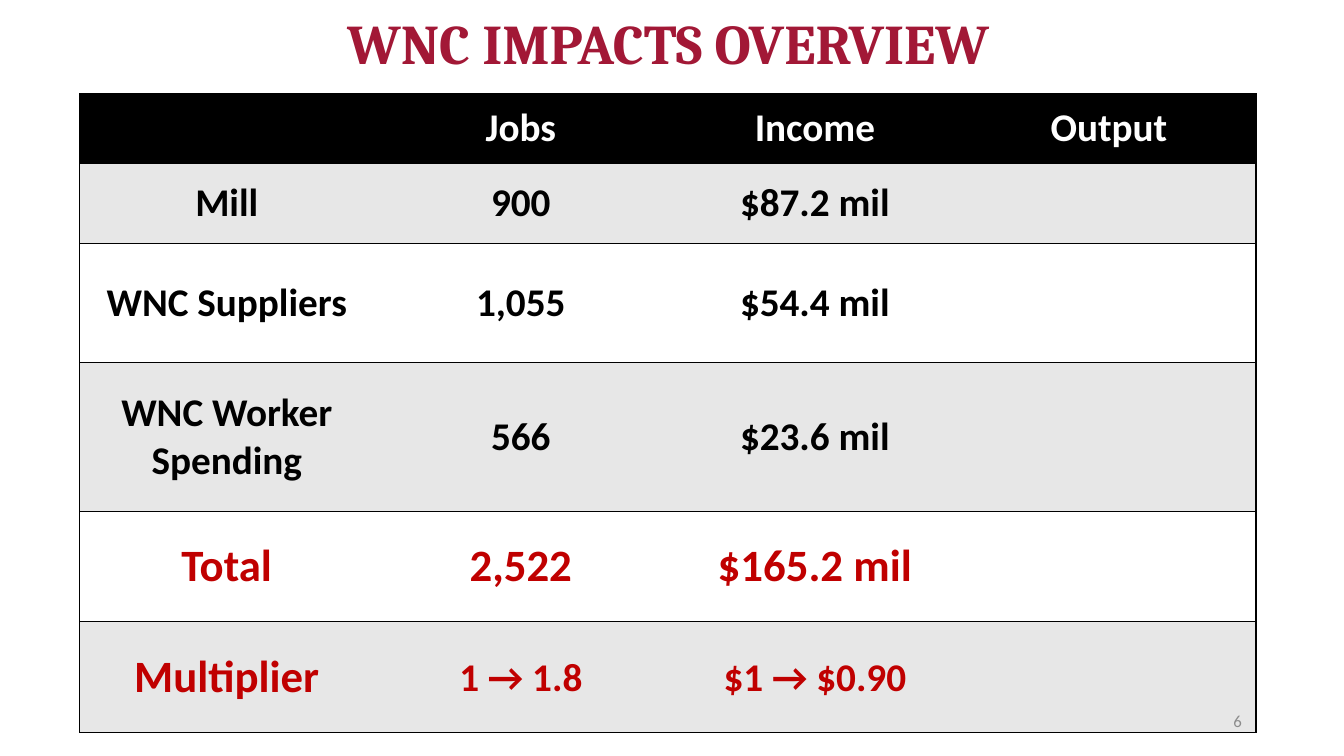
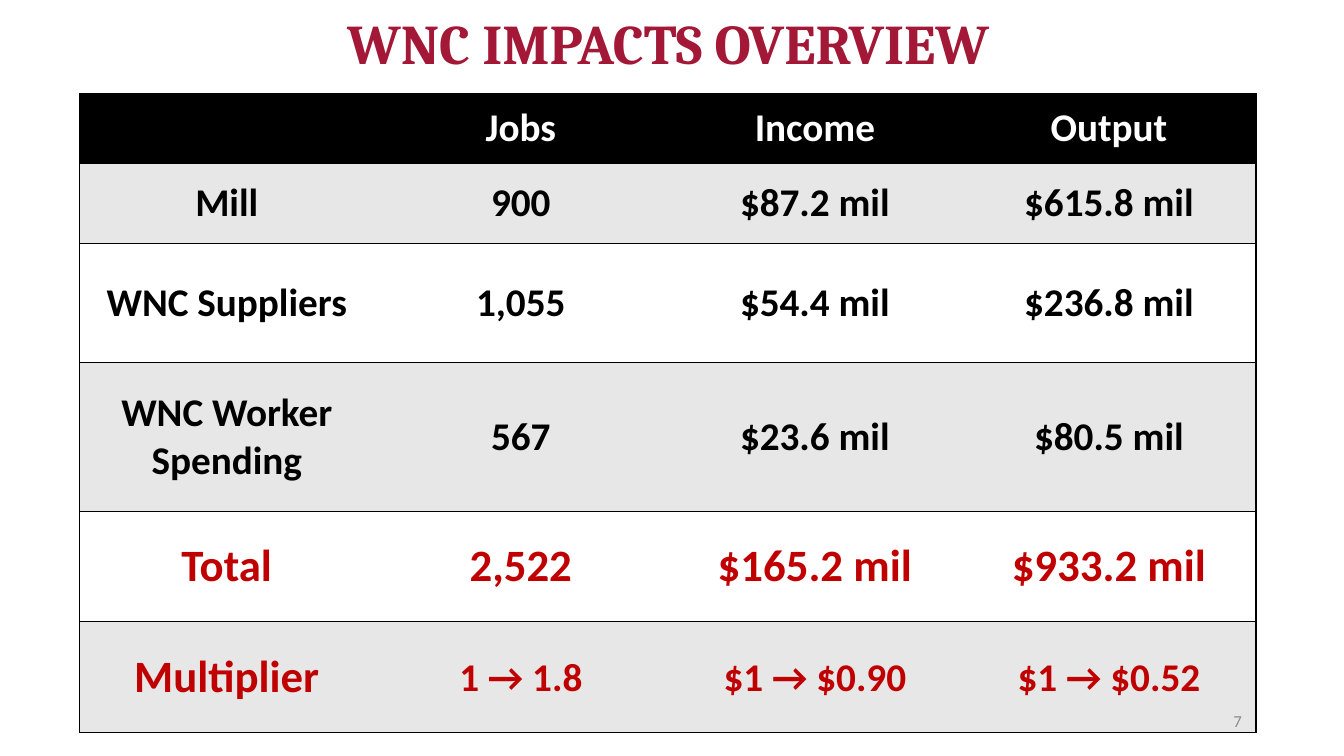
from lxml import etree
from pptx import Presentation
from pptx.dml.color import RGBColor
from pptx.enum import text
from pptx.oxml import ns
from pptx.util import Cm, Pt

CRIMSON = RGBColor(0xA2, 0x18, 0x36)
RED = RGBColor(0xC0, 0x00, 0x00)
BLACK = RGBColor(0x00, 0x00, 0x00)
WHITE = RGBColor(0xFF, 0xFF, 0xFF)
BAND_GREY = RGBColor(0xE7, 0xE7, 0xE7)
NUMBER_GREY = RGBColor(0x8C, 0x8C, 0x8C)

COLUMN_WIDTH = Cm(7.41)
ROW_HEIGHTS = [Cm(1.75), Cm(2.03), Cm(3), Cm(3.74), Cm(2.79), Cm(2.79)]
HEADINGS = ["", "Jobs", "Income", "Output"]
ROW_LABELS = ["Mill", "WNC Suppliers", "WNC Worker\vSpending", "Total", "Multiplier"]
INCOME = ["$87.2 mil", "$54.4 mil", "$23.6 mil", "$165.2 mil", "$1 → $0.90"]

# Slide number, jobs and output; the rest is shared
SLIDES = [
    (6, ["900", "1,055", "566", "2,522", "1 → 1.8"], [""] * 5),
    (7, ["900", "1,055", "567", "2,522", "1 → 1.8"],
     ["$615.8 mil", "$236.8 mil", "$80.5 mil", "$933.2 mil", "$1 → $0.52"]),
]


def style(paragraph, font_name, size, color, bold, align):
    paragraph.alignment = align
    font = paragraph.font
    font.name, font.size, font.bold = font_name, Pt(size), bold
    font.color.rgb = color


def set_borders(cell, visible_sides):
    """Black 1 pt lines on the sides named, none on the others."""
    properties = cell._tc.get_or_add_tcPr()
    for position, side in enumerate("LRTB"):
        line = etree.Element(ns.qn(f"a:ln{side}"), w=str(Pt(1)))
        if side in visible_sides:
            fill = etree.SubElement(line, ns.qn("a:solidFill"))
            etree.SubElement(fill, ns.qn("a:srgbClr"), val=str(BLACK))
        else:
            etree.SubElement(line, ns.qn("a:noFill"))
        properties.insert(position, line)


prs = Presentation()
prs.slide_width, prs.slide_height = Cm(33.87), Cm(19.05)

for number, jobs, output in SLIDES:
    slide = prs.slides.add_slide(prs.slide_layouts[6])

    # Title
    title = slide.shapes.add_textbox(Cm(0), Cm(0.1), Cm(33.68), Cm(1.96)).text_frame
    title.word_wrap = True
    title.text = "WNC IMPACTS OVERVIEW"
    style(title.paragraphs[0], "Cambria", 40, CRIMSON, True, text.PP_ALIGN.CENTER)

    # Impact table
    rows = [HEADINGS, *zip(ROW_LABELS, jobs, INCOME, output)]
    impacts = slide.shapes.add_table(
        len(rows), len(HEADINGS), Cm(2.01), Cm(2.36),
        COLUMN_WIDTH * len(HEADINGS), sum(ROW_HEIGHTS)).table
    for column in impacts.columns:
        column.width = COLUMN_WIDTH
    for r, values in enumerate(rows):
        impacts.rows[r].height = ROW_HEIGHTS[r]
        is_multiplier = values[0] == "Multiplier"
        is_summary = is_multiplier or values[0] == "Total"
        row_fill = BLACK if r == 0 else BAND_GREY if r % 2 else WHITE
        color = WHITE if r == 0 else RED if is_summary else BLACK
        for c, value in enumerate(values):
            cell = impacts.cell(r, c)
            cell.text = value
            cell.vertical_anchor = text.MSO_ANCHOR.MIDDLE
            cell.fill.solid()
            cell.fill.fore_color.rgb = row_fill
            set_borders(cell, "TB" + {0: "L", len(values) - 1: "R"}.get(c, ""))
            size = 32 if is_summary else 28
            if is_multiplier and c > 0:
                size = 28
                cell.margin_left = cell.margin_right = cell.margin_top = Cm(0.03)
                cell.margin_bottom = Cm(0)
            style(cell.text_frame.paragraphs[0], "Calibri", size, color, True,
                  text.PP_ALIGN.CENTER)

    # Slide number
    footer = slide.shapes.add_textbox(Cm(23.93), Cm(17.65), Cm(7.62), Cm(1.02)).text_frame
    footer.word_wrap = True
    footer.vertical_anchor = text.MSO_ANCHOR.MIDDLE
    footer.text = str(number)
    style(footer.paragraphs[0], "Calibri", 12, NUMBER_GREY, False, text.PP_ALIGN.RIGHT)

prs.save("out.pptx")
